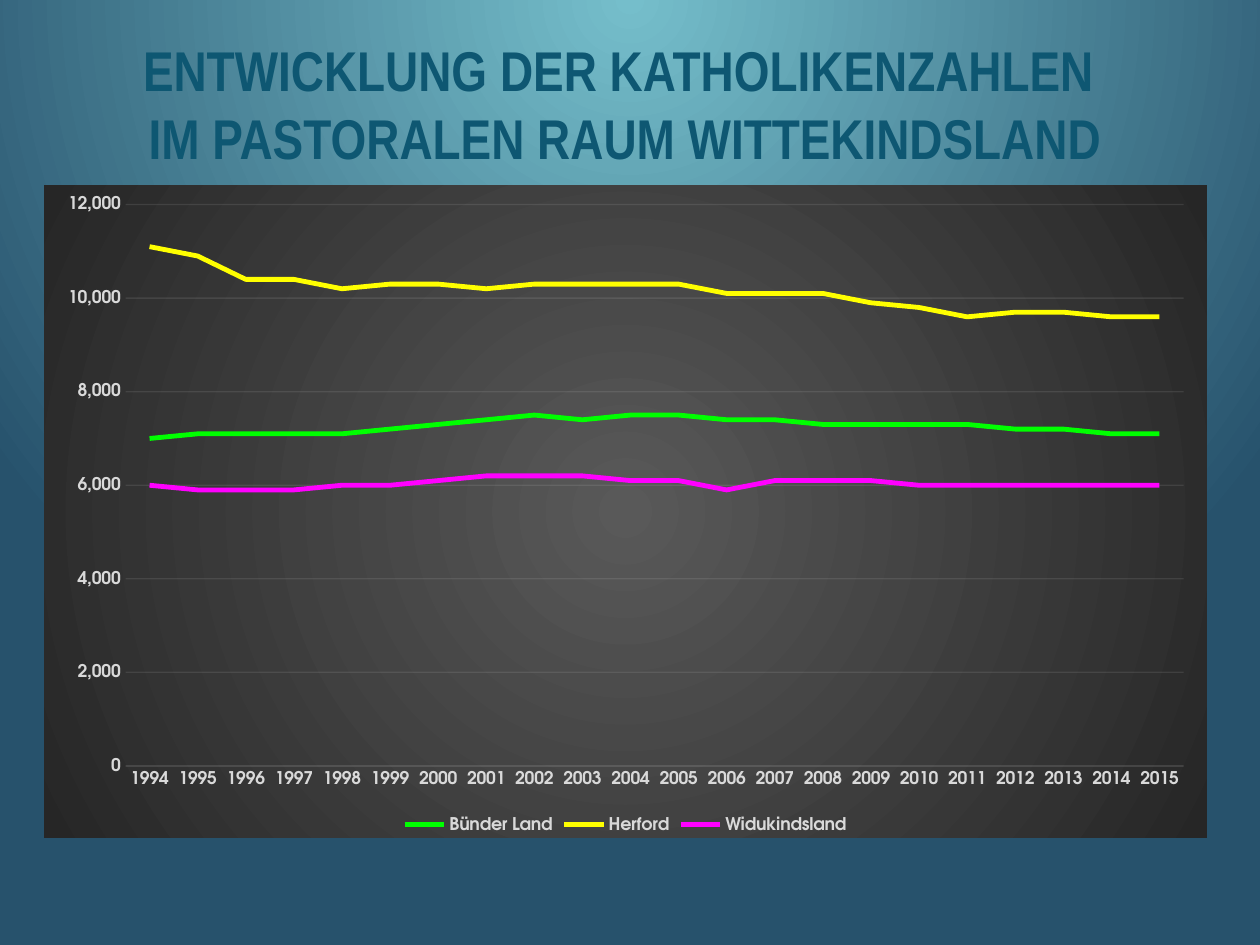
from lxml.etree import SubElement
from pptx import Presentation
from pptx.chart.data import CategoryChartData as ChartData
from pptx.dml.color import RGBColor as Rgb
from pptx.enum.chart import XL_CHART_TYPE as Kind, XL_LEGEND_POSITION as Side, XL_TICK_MARK as Tick
from pptx.enum.text import MSO_ANCHOR as Anchor, PP_ALIGN as Align
from pptx.oxml import parse_xml
from pptx.oxml.ns import nsdecls, qn
from pptx.util import Cm, Pt

COLORS = {
    "sky": "75BECB", "sea": "27526C", "title": "0E5772",
    "gray": "595959", "dark": "262626", "text": "D9D9D9", "grid": "F2F2F2",
    "Bünder Land": "00FF00", "Herford": "FFFF00", "Widukindsland": "FF00FF",
}
FACE = "TeX Gyre Adventor"
YEARS = range(1994, 2016)
COUNTS = {
    "Bünder Land": [7000, 7100, 7100, 7100, 7100, 7200, 7300, 7400, 7500, 7400, 7500,
                    7500, 7400, 7400, 7300, 7300, 7300, 7300, 7200, 7200, 7100, 7100],
    "Herford": [11100, 10900, 10400, 10400, 10200, 10300, 10300, 10200, 10300, 10300, 10300,
                10300, 10100, 10100, 10100, 9900, 9800, 9600, 9700, 9700, 9600, 9600],
    "Widukindsland": [6000, 5900, 5900, 5900, 6000, 6000, 6100, 6200, 6200, 6200, 6100,
                      6100, 5900, 6100, 6100, 6100, 6000, 6000, 6000, 6000, 6000, 6000],
}


def color(name):
    """Return the named colour."""
    return Rgb.from_string(COLORS[name])


def glow(inner, outer, left, top, right, bottom):
    """Return a round gradient that starts from the given focus."""
    return parse_xml(
        f'<a:gradFill {nsdecls("a")} rotWithShape="1"><a:gsLst>'
        f'<a:gs pos="0"><a:srgbClr val="{COLORS[inner]}"/></a:gs>'
        f'<a:gs pos="100000"><a:srgbClr val="{COLORS[outer]}"/></a:gs></a:gsLst>'
        f'<a:path path="circle"><a:fillToRect l="{left}000" t="{top}000" '
        f'r="{right}000" b="{bottom}000"/></a:path></a:gradFill>')


def style(font, size, name, face):
    """Set a bold font."""
    font.size, font.name, font.bold = Pt(size), face, True
    font.color.rgb = color(name)


def faint(line):
    """Draw a thin line that is mostly transparent."""
    line.width = Pt(0.75)
    line.color.rgb = color("grid")
    for tint in line._ln.iter(qn("a:srgbClr")):
        SubElement(tint, qn("a:alpha")).set("val", "10000")


def backdrop(slide):
    """Fill the slide background with a glow from the top."""
    fill = slide.background.fill
    fill.solid()
    old = next(slide.element.iter(qn("a:solidFill")))
    old.getparent().replace(old, glow("sky", "sea", 0, 0, 0, 100))


def heading(slide, box, text):
    """Place the centred title in the box."""
    frame = slide.shapes.add_textbox(*box).text_frame
    frame.word_wrap = True
    frame.vertical_anchor = Anchor.MIDDLE
    para = frame.paragraphs[0]
    para.text = text
    para.alignment = Align.CENTER
    style(para.font, 32, "title", "Arial Narrow")


def place(chart, **parts):
    """Fix the inner plot area as shares of the chart."""
    area = next(chart.element.iter(qn("c:plotArea")))
    for old in area.findall(qn("c:layout")):
        area.remove(old)
    sizes = "".join(f'<c:{key} val="{val}"/>' for key, val in parts.items())
    area.insert(0, parse_xml(
        f'<c:layout {nsdecls("c")}><c:manualLayout><c:layoutTarget val="inner"/>'
        f'<c:xMode val="edge"/><c:yMode val="edge"/>{sizes}'
        '</c:manualLayout></c:layout>'))


def trend(slide, box):
    """Place the line chart in the box."""
    data = ChartData(number_format="#,##0")
    data.categories = [str(year) for year in YEARS]
    for name, vals in COUNTS.items():
        data.add_series(name, vals)
    chart = slide.shapes.add_chart(Kind.LINE, *box, data).chart
    chart.has_title = False
    style(chart.font, 10, "text", FACE)
    panel = parse_xml(f'<c:spPr {nsdecls("c", "a")}><a:ln><a:noFill/></a:ln></c:spPr>')
    panel.insert(0, glow("gray", "dark", 50, 50, 50, 50))
    chart.element.find(qn("c:txPr")).addprevious(panel)
    place(chart, x=0.07, y=0.03, w=0.91, h=0.86)

    chart.has_legend = True
    chart.legend.position = Side.BOTTOM
    chart.legend.include_in_layout = False
    style(chart.legend.font, 10, "text", FACE)

    years, count = chart.category_axis, chart.value_axis
    for axis in (years, count):
        axis.major_tick_mark = axis.minor_tick_mark = Tick.NONE
        style(axis.tick_labels.font, 10, "text", FACE)
    faint(years.format.line)
    count.format.line.fill.background()
    count.minimum_scale, count.maximum_scale, count.major_unit = 0, 12000, 2000
    count.tick_labels.number_format = "#,##0"
    count.tick_labels.number_format_is_linked = False
    count.has_major_gridlines = True
    faint(count.major_gridlines.format.line)

    plot = chart.plots[0]
    plot.vary_by_categories = False
    for row in plot.series:
        row.smooth = False
        row.format.line.width = Pt(2.75)
        row.format.line.color.rgb = color(row.name)


def main():
    """Build and save the slide."""
    deck = Presentation()
    deck.slide_width, deck.slide_height = Cm(25.4), Cm(19.05)
    slide = deck.slides.add_slide(deck.slide_layouts[6])
    backdrop(slide)
    heading(slide, (Cm(0.69), Cm(0.66), Cm(23.83), Cm(2.84)),
            "ENTWICKLUNG DER KATHOLIKENZAHLEN \vIM PASTORALEN RAUM WITTEKINDSLAND")
    trend(slide, (Cm(0.89), Cm(3.73), Cm(23.44), Cm(13.16)))
    deck.save("out.pptx")


if __name__ == "__main__":
    main()
